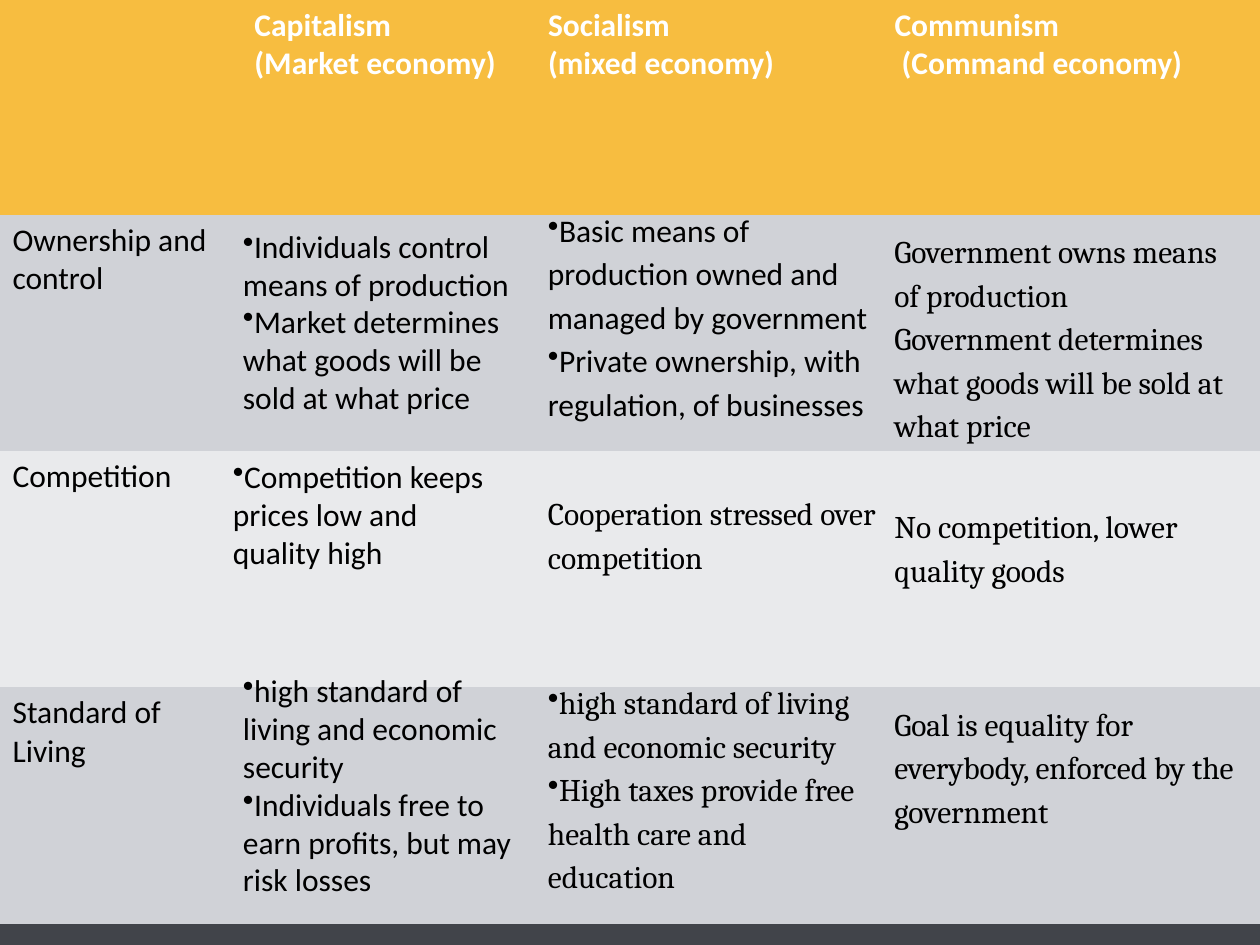
from lxml.etree import SubElement
from pptx import Presentation
from pptx.dml.color import RGBColor
from pptx.enum.shapes import MSO_SHAPE
from pptx.enum.text import MSO_AUTO_SIZE
from pptx.oxml.ns import qn
from pptx.util import Inches, Pt

COLORS = {
    "background": "000000",
    "band": "838995",
    "header": "F7BD40",
    "header_text": "FFFFFF",
    "odd_row": "D0D2D7",
    "even_row": "E9EAEC",
    "text": "000000",
}
NO_GRID_STYLE = "{2D5ABB26-0587-4C30-8999-92F81FD0307C}"
COLUMN_WIDTHS = [1.92, 2.33, 2.75, 3]
ROW_HEIGHTS = [1.71, 1.88, 1.88, 1.88]
SYSTEMS = [
    [],
    ["Capitalism", "(Market economy)"],
    ["Socialism", "(mixed economy)"],
    ["Communism", " (Command economy)"],
]
TOPICS = ["Ownership and control", "Competition", "Standard of Living"]

CAPITALISM = [
    ((1.83, 1.75, 2.5, 1.92), [
        "Individuals control means of production",
        "Market determines what goods will be sold at what price"], {}),
    ((1.75, 3.58, 2.33, 1.31), [
        "Competition keeps prices low and quality high"], {}),
    ((1.83, 5.28, 2.42, 2.22), [
        "high standard of living and economic security",
        "Individuals free to earn profits, but may risk losses"], {}),
]
SOCIALISM = [
    ((4.25, 1.58, 2.83, 2.15), [
        "Basic means of production owned and managed by government",
        "Private ownership, with regulation, of businesses"], {"font": "Calibri"}),
    ((4.25, 3.83, 2.83, 1.1), [
        "Cooperation stressed over competition"], {"bulleted": False}),
    ((4.25, 5.33, 2.75, 2.15), [
        "high standard of living and economic security",
        "High taxes provide free health care and education"], {}),
]
COMMUNISM = [
    ((7, 1.75, 3, 2.15), [
        "Government owns means of production",
        "Government determines what goods will be sold at what price"], {}),
    ((7, 3.58, 3, 1.45), [
        "No competition, lower quality goods"], {"top_inset": 0.4}),
    ((7, 5.5, 3, 1.45), [
        "Goal is equality for everybody, enforced by the government"], {}),
]


def rgb(name):
    return RGBColor.from_string(COLORS[name])


def write_paragraphs(frame, lines, font, color, bold=False, spacing=None, bulleted=False):
    for index, line in enumerate(lines):
        paragraph = frame.paragraphs[0] if index == 0 else frame.add_paragraph()
        if spacing:
            paragraph.line_spacing = spacing
        if bulleted:
            SubElement(paragraph._p.get_or_add_pPr(), qn("a:buChar")).set("char", "•")
        run = paragraph.add_run()
        run.text = line
        run.font.name = font
        run.font.size = Pt(18)
        run.font.bold = bold
        run.font.color.rgb = rgb(color)


def add_band(slide, left, top, width, height):
    band = slide.shapes.add_shape(
        MSO_SHAPE.RECTANGLE, Inches(left), Inches(top), Inches(width), Inches(height))
    band.shadow.inherit = False
    band.line.fill.background()
    band.fill.solid()
    band.fill.fore_color.rgb = rgb("band")
    tint = band._element.spPr.find(".//" + qn("a:srgbClr"))
    SubElement(tint, qn("a:alpha")).set("val", "50000")


def add_comparison_table(slide, left, top, width, height):
    table = slide.shapes.add_table(
        len(ROW_HEIGHTS), len(COLUMN_WIDTHS),
        Inches(left), Inches(top), Inches(width), Inches(height)).table
    table._tbl.tblPr.find(qn("a:tableStyleId")).text = NO_GRID_STYLE
    for column, share in zip(table.columns, COLUMN_WIDTHS):
        column.width = Inches(width * share / sum(COLUMN_WIDTHS))
    for row, share in zip(table.rows, ROW_HEIGHTS):
        row.height = Inches(height * share / sum(ROW_HEIGHTS))
    row_fills = ["header", "odd_row", "even_row", "odd_row"]
    for row, fill in zip(table.rows, row_fills):
        for cell in row.cells:
            cell.fill.solid()
            cell.fill.fore_color.rgb = rgb(fill)
    for column, heading in enumerate(SYSTEMS):
        write_paragraphs(table.cell(0, column).text_frame, heading,
                         "Calibri", "header_text", bold=True)
    for row, topic in enumerate(TOPICS, start=1):
        write_paragraphs(table.cell(row, 0).text_frame, [topic], "Calibri", "text")


def add_note(slide, box, lines, font, spacing=None, bulleted=False, top_inset=0.05):
    note = slide.shapes.add_textbox(*[Inches(length) for length in box])
    frame = note.text_frame
    frame.word_wrap = True
    frame.auto_size = MSO_AUTO_SIZE.SHAPE_TO_FIT_TEXT
    frame.margin_top = Inches(top_inset)
    write_paragraphs(frame, lines, font, "text", spacing=spacing, bulleted=bulleted)


def add_notes(slide, notes, **defaults):
    for box, lines, changes in notes:
        add_note(slide, box, lines, **{**defaults, **changes})


def main():
    presentation = Presentation()
    presentation.slide_width = Inches(10)
    presentation.slide_height = Inches(7.5)
    slide = presentation.slides.add_slide(presentation.slide_layouts[6])
    slide.background.fill.solid()
    slide.background.fill.fore_color.rgb = rgb("background")
    add_band(slide, 0, 5.19, 10, 2.31)
    add_comparison_table(slide, 0, 0, 10, 7.33)
    add_notes(slide, CAPITALISM, font="Calibri", bulleted=True)
    add_notes(slide, SOCIALISM, font="Cambria", spacing=1.15, bulleted=True)
    add_notes(slide, COMMUNISM, font="Cambria", spacing=1.15)
    presentation.save("out.pptx")


if __name__ == "__main__":
    main()
